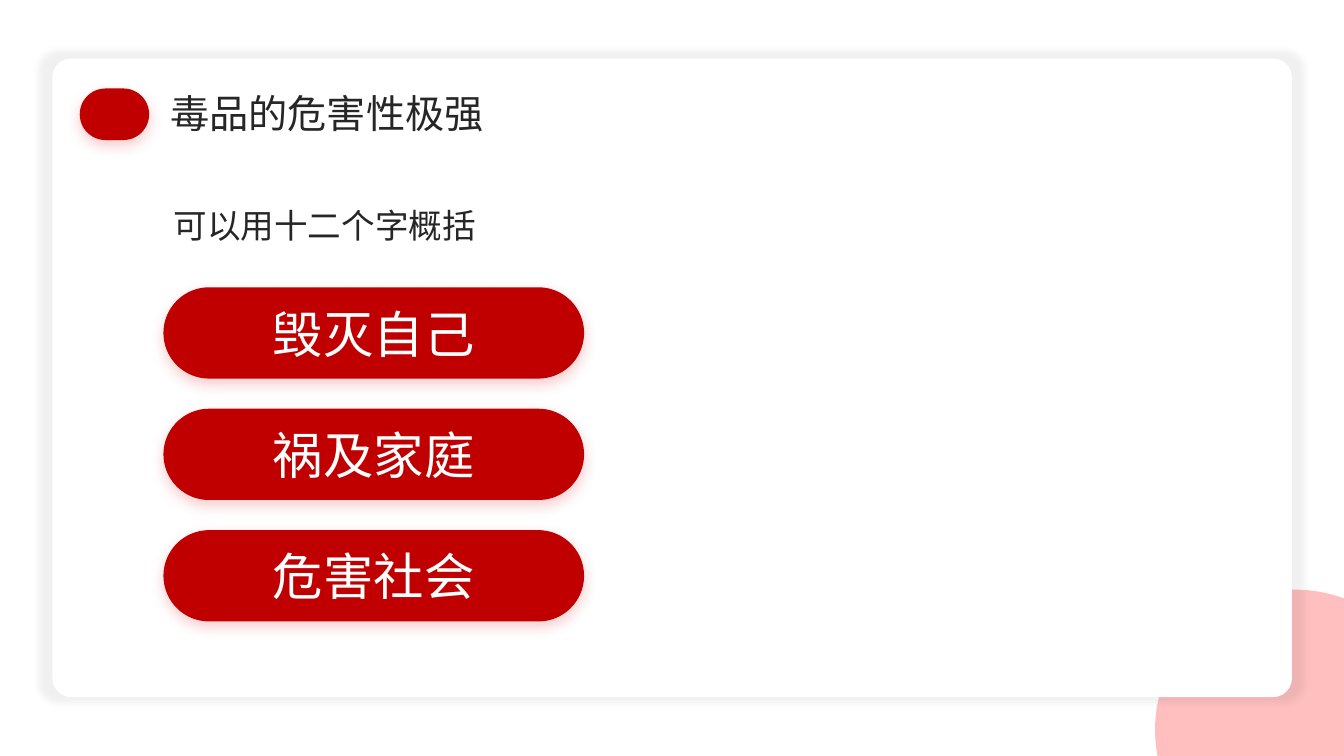
import math
from dataclasses import dataclass

import lxml.etree
import pptx
import pptx.dml.color
import pptx.enum.shapes
import pptx.enum.text
import pptx.oxml.ns
import pptx.util

Cm = pptx.util.Cm
Pt = pptx.util.Pt
qn = pptx.oxml.ns.qn
Kind = pptx.enum.shapes.MSO_SHAPE
Align = pptx.enum.text.PP_ALIGN


@dataclass(frozen=True)
class Theme:
    font: str = "Noto Sans CJK SC"
    red: str = "C00000"
    pink: str = "FFBFBF"
    white: str = "FFFFFF"
    ink: str = "262626"
    glow: str = "DE0000"
    black: str = "000000"
    head: int = 28
    lead: int = 24
    pill: int = 36


THEME = Theme()
WIDE, HIGH = 33.87, 19.05


def color(code):
    return pptx.dml.color.RGBColor.from_string(code)


def assign(item, values):
    for name, value in values.items():
        setattr(item, name, value)


def paint(shape, fill):
    shape.shadow.inherit = False
    shape.fill.solid()
    shape.fill.fore_color.rgb = color(fill)
    shape.line.fill.background()


def shade(shape, tint, alpha, blur, drop=0, scale=100):
    effects = shape.element.spPr.find(qn("a:effectLst"))
    values = {"blurRad": Pt(blur), "dist": Pt(drop), "dir": 5400000,
              "sx": scale * 1000, "sy": scale * 1000,
              "algn": "ctr", "rotWithShape": 0}
    outer = lxml.etree.SubElement(
        effects, qn("a:outerShdw"), {k: str(v) for k, v in values.items()})
    tone = lxml.etree.SubElement(outer, qn("a:srgbClr"), val=tint)
    lxml.etree.SubElement(tone, qn("a:alpha"), val=str(alpha * 1000))


def draw(slide, box, fill, bend):
    shape = slide.shapes.add_shape(Kind.ROUNDED_RECTANGLE, *map(Cm, box))
    shape.adjustments[0] = bend
    paint(shape, fill)
    return shape


def write(shape, text, size, tint, align, wrap=True):
    frame = shape.text_frame
    frame.text = text
    assign(frame, {
        "word_wrap": wrap,
        "auto_size": pptx.enum.text.MSO_AUTO_SIZE.NONE,
        "vertical_anchor": pptx.enum.text.MSO_ANCHOR.MIDDLE,
    })
    line = frame.paragraphs[0]
    assign(line, {"alignment": align, "space_before": Pt(0)})
    run = line.runs[0]
    assign(run.font, {"name": THEME.font, "size": Pt(size), "bold": False})
    run.font.color.rgb = color(tint)
    lxml.etree.SubElement(
        run.font._element, qn("a:ea"), typeface=THEME.font)


def plain(holder):
    props = holder.text_frame.paragraphs[0]._p.get_or_add_pPr()
    for name in ("marL", "indent"):
        props.set(name, "0")
    lxml.etree.SubElement(props, qn("a:buNone"))


def lift(holder, box):
    names = ("left", "top", "width", "height")
    assign(holder, dict(zip(names, map(Cm, box))))
    holder.element.getparent().append(holder.element)


def pill(slide, box):
    shape = draw(slide, box, THEME.red, 0.5)
    shade(shape, THEME.glow, 20, 10, 4)
    return shape


def disc(slide, box):
    left, top, wide, high = box
    radius = 3.53
    mid_x, mid_y = left + radius, top + radius
    first = math.pi - math.asin((top + high - mid_y) / radius)
    last = 2 * math.pi - math.acos((left + wide - mid_x) / radius)
    steps = 90
    turns = [first + (last - first) * i / steps for i in range(steps + 1)]
    dots = [(Cm(mid_x + radius * math.cos(t)),
             Cm(mid_y + radius * math.sin(t))) for t in turns]
    dots.append((Cm(left + wide), Cm(top + high)))
    form = slide.shapes.build_freeform(*dots[0])
    form.add_line_segments(dots[1:], close=True)
    paint(form.convert_to_shape(), THEME.pink)


def panel(slide, box):
    shape = draw(slide, box, THEME.white, 0.03)
    shade(shape, THEME.black, 5, 5, scale=102)


def header(slide, box, text):
    left, top, wide, high = box
    pill(slide, (left, top + 0.1, 1.75, 1.3))
    title = slide.shapes.title
    lift(title, (left + 2.03, top, wide - 2.03, high))
    write(title, text, THEME.head, THEME.ink, Align.LEFT, False)


def summary(slide, box, lead, words):
    left, top, wide, high = box
    body = slide.placeholders[1]
    lift(body, (left, top, wide, 1.27))
    write(body, lead, THEME.lead, THEME.ink, Align.LEFT)
    plain(body)
    tall, gap = 2.3, 0.76
    start = top + high - len(words) * (tall + gap) + gap
    for i, word in enumerate(words):
        shape = pill(slide, (left, start + i * (tall + gap), wide, tall))
        write(shape, word, THEME.pill, THEME.white, Align.CENTER)


def main():
    deck = pptx.Presentation()
    assign(deck, {"slide_width": Cm(WIDE), "slide_height": Cm(HIGH)})
    slide = deck.slides.add_slide(deck.slide_layouts[1])
    disc(slide, (29.11, 14.86, WIDE - 29.11, HIGH - 14.86))
    panel(slide, (1.32, 1.47, 31.24, 16.1))
    header(slide, (2.01, 2.13, 10.51, 1.45), "毒品的危害性极强")
    summary(slide, (4.12, 5.03, 10.6, 10.63), "可以用十二个字概括",
            ("毁灭自己", "祸及家庭", "危害社会"))
    deck.save("out.pptx")


if __name__ == "__main__":
    main()
